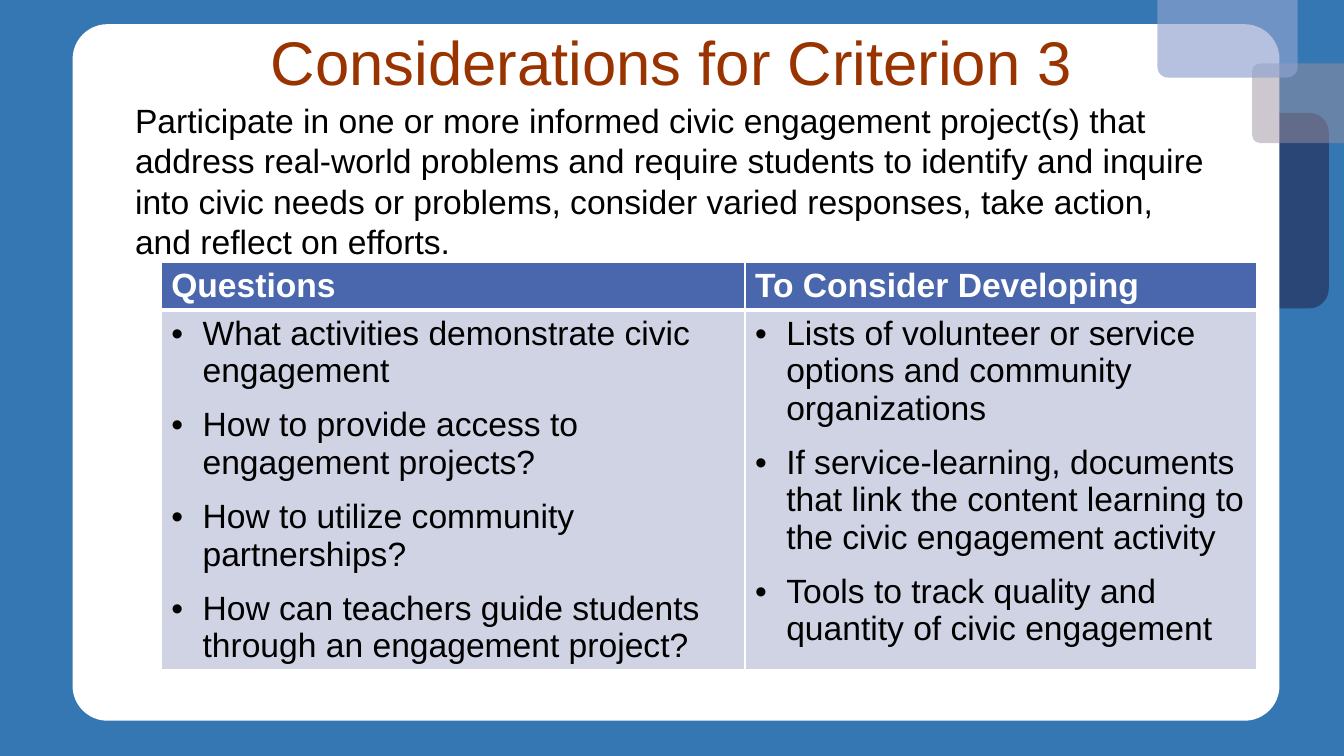
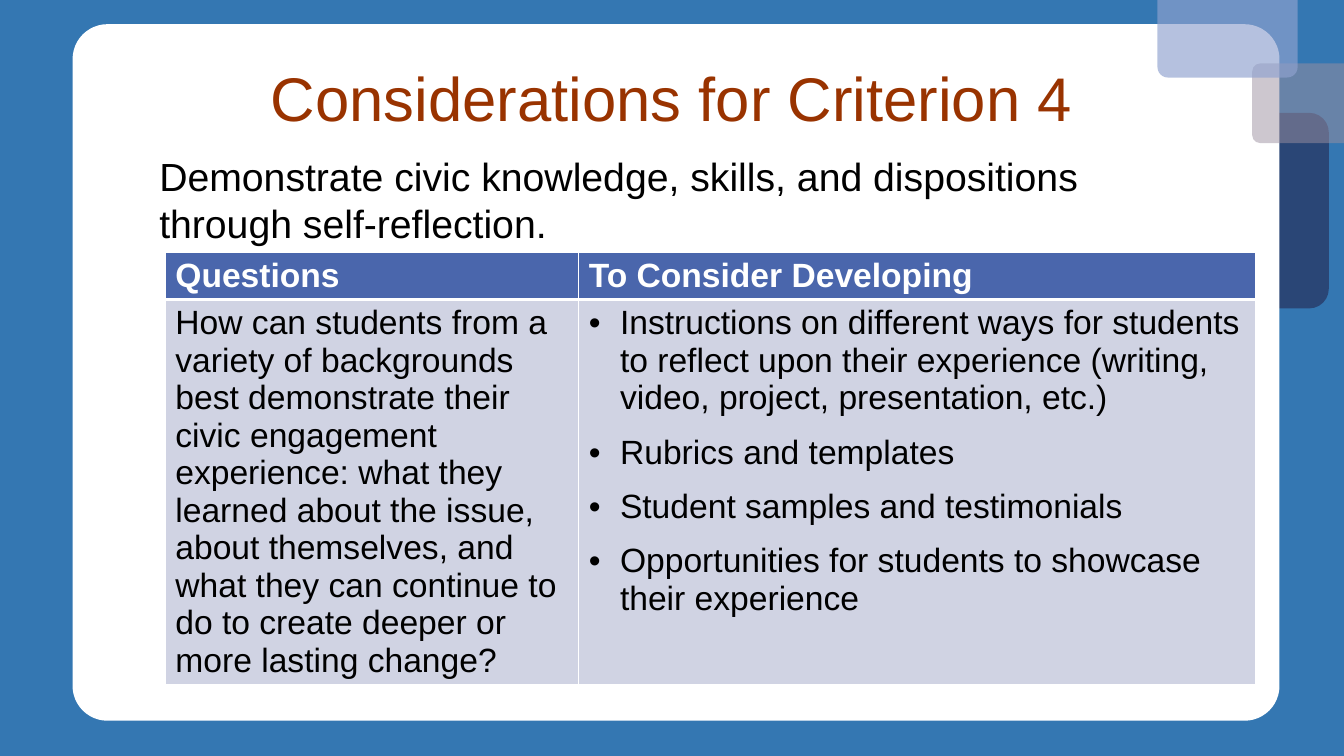
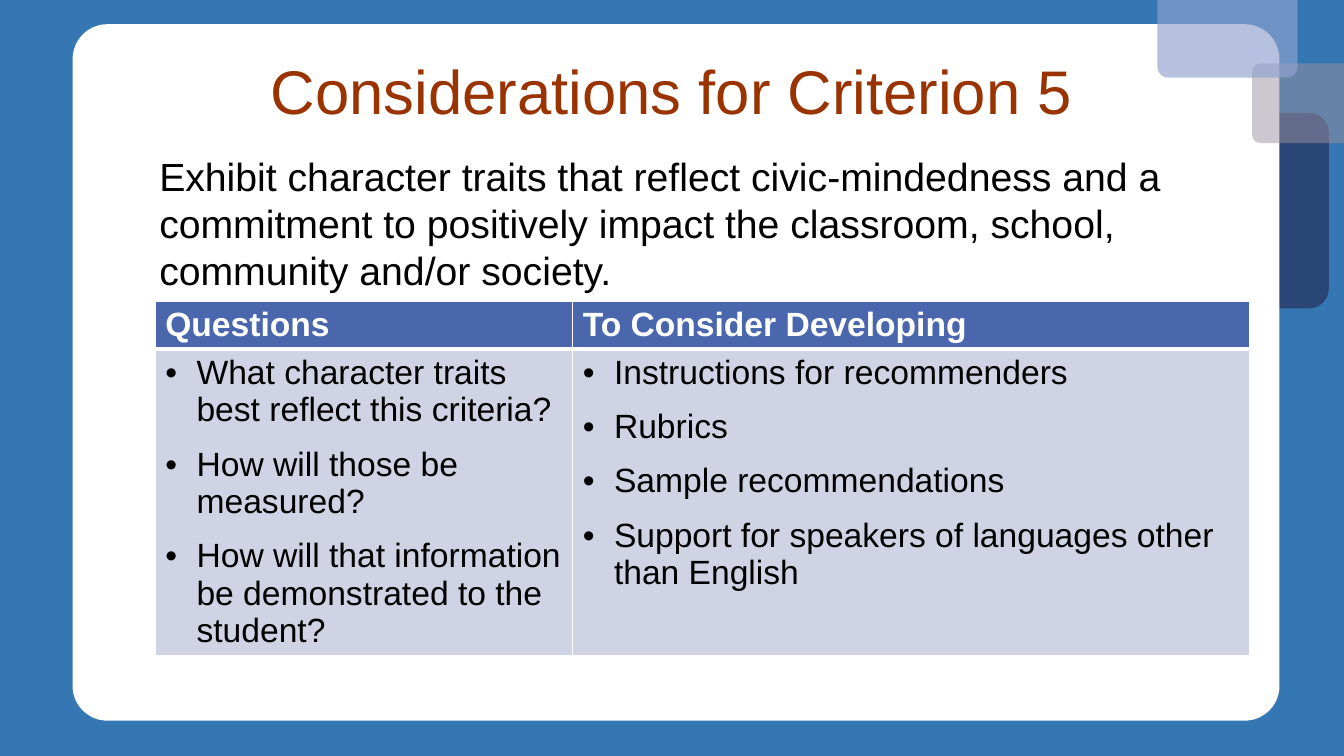
from collections import namedtuple

from pptx import Presentation
from pptx.dml.color import RGBColor
from pptx.enum.shapes import MSO_SHAPE
from pptx.enum.text import MSO_ANCHOR, MSO_AUTO_SIZE, PP_ALIGN
from pptx.oxml.ns import qn
from pptx.util import Inches, Pt
from lxml.etree import SubElement

WIDTH, HEIGHT = Inches(13.33), Inches(7.5)
FONT = "Arial"
BLUE, NAVY, MAUVE, LILAC = "3477B2", "242852", "9D90A0", "90A2CF"
WHITE, BLACK, RUST = "FFFFFF", "000000", "993300"
HEADER_FILL, CELL_FILL = "4A66AC", "D0D3E3"
HEADINGS = ["Questions", "To Consider Developing"]
HEADER_ROW = 6.2

# Lengths are percentages of the slide's width (left, width) and height (top, height).
Box = namedtuple("Box", "left top width height")
Criterion = namedtuple(
    "Criterion", "title title_box summary summary_size summary_box table_box columns cells")

PANELS = [  # box, corner, colour, opacity; from back to front
    (Box(82.22, 14.93, 16.65, 25.87), 0.1, NAVY, 62),
    (Box(5.4, 3.2, 89.8, 92.13), 0.05, WHITE, 100),
    (Box(93.17, 8.4, 16.65, 10.53), 0.1, MAUVE, 50),
    (Box(86.12, -7.07, 10.43, 17.33), 0.08, LILAC, 66),
]

CRITERIA = [
    Criterion(
        "Considerations for Criterion 3", Box(11.1, 1.87, 77.8, 13.73),
        "Participate in one or more informed civic engagement project(s) that address "
        "real-world problems and require students to identify and inquire into civic needs "
        "or problems, consider varied responses, take action, and reflect on efforts.",
        24, Box(9.3, 12.53, 81.47, 24.13),
        Box(12, 34.67, 81.47, 53.8), [43.43, 38.04],
        [["What activities demonstrate civic engagement",
          "How to provide access to engagement projects?",
          "How to utilize community partnerships?",
          "How can teachers guide students through an engagement project?"],
         ["Lists of volunteer or service options and community organizations",
          "If service-learning, documents that link the content learning to the civic "
          "engagement activity",
          "Tools to track quality and quantity of civic engagement"]]),
    Criterion(
        "Considerations for Criterion 4", Box(11.1, 5.33, 77.8, 16.27),
        "Demonstrate civic knowledge, skills, and dispositions through self-reflection.",
        28, Box(11.1, 19.47, 77.8, 14.67),
        Box(12.3, 33.33, 81.1, 57.1), [30.76, 50.34],
        [["How can students from a variety of backgrounds best demonstrate their civic "
          "engagement experience: what they learned about the issue, about themselves, and "
          "what they can continue to do to create deeper or more lasting change?"],
         ["Instructions on different ways for students to reflect upon their experience "
          "(writing, video, project, presentation, etc.)",
          "Rubrics and templates",
          "Student samples and testimonials",
          "Opportunities for students to showcase their experience"]]),
    Criterion(
        "Considerations for Criterion 5", Box(11.1, 2.8, 77.8, 19.33),
        "Exhibit character traits that reflect civic-mindedness and a commitment to "
        "positively impact the classroom, school, community and/or society.",
        28, Box(11.1, 19.47, 77.8, 21.87),
        Box(11.55, 39.87, 81.4, 46.7), [31.06, 50.34],
        [["What character traits best reflect this criteria?",
          "How will those be measured?",
          "How will that information be demonstrated to the student?"],
         ["Instructions for recommenders",
          "Rubrics",
          "Sample recommendations",
          "Support for speakers of languages other than English"]]),
]


def across(percent):
    return round(WIDTH * percent / 100)


def down(percent):
    return round(HEIGHT * percent / 100)


def frame_of(box):
    return across(box.left), down(box.top), across(box.width), down(box.height)


def place(shape, box):
    shape.left, shape.top, shape.width, shape.height = frame_of(box)


def paint(fill, colour):
    fill.solid()
    fill.fore_color.rgb = RGBColor.from_string(colour)


def style(para, size, colour, spacing=1.0, bold=False, after=0):
    para.line_spacing = spacing
    para.space_before, para.space_after = Pt(0), Pt(after)
    for span in para.runs:
        span.font.name, span.font.size, span.font.bold = FONT, Pt(size), bold
        span.font.color.rgb = RGBColor.from_string(colour)


def set_bullet(para, symbol=None, indent=0):
    """Give the paragraph a hanging bullet, or none when there is no symbol."""
    props = para._p.get_or_add_pPr()
    props.set("marL", str(Inches(indent)))
    props.set("indent", str(-Inches(indent)))
    if symbol:
        SubElement(props, qn("a:buFont"), typeface=FONT)
        SubElement(props, qn("a:buChar"), char=symbol)
    else:
        SubElement(props, qn("a:buNone"))


def set_borders(cell, top, bottom):
    """Draw white borders, which must stand before the fill of the cell."""
    props = cell._tc.get_or_add_tcPr()
    sides = [("L", 1), ("R", 1), ("T", top), ("B", bottom)]
    for index, (side, points) in enumerate(sides):
        line = SubElement(props, qn(f"a:ln{side}"), w=str(Pt(points)))
        SubElement(SubElement(line, qn("a:solidFill")), qn("a:srgbClr"), val=WHITE)
        props.insert(index, line)


def decorate(layout, page):
    """Draw the panels on the page, then move them behind the layout's placeholders."""
    for index, (box, corner, colour, opacity) in enumerate(PANELS):
        panel = page.shapes.add_shape(MSO_SHAPE.ROUNDED_RECTANGLE, *frame_of(box))
        panel.adjustments[0] = corner
        panel.shadow.inherit = False
        panel.line.fill.background()
        paint(panel.fill, colour)
        if opacity < 100:
            tint = next(panel.element.iter(qn("a:srgbClr")))
            SubElement(tint, qn("a:alpha"), val=str(opacity * 1000))
        layout.shapes.element.insert(2 + index, panel.element)


def fill_title(title, text, box):
    place(title, box)
    frame = title.text_frame
    frame.text = text
    frame.auto_size = MSO_AUTO_SIZE.NONE
    frame.vertical_anchor = MSO_ANCHOR.MIDDLE
    frame.paragraphs[0].alignment = PP_ALIGN.CENTER
    style(frame.paragraphs[0], 44, RUST, spacing=0.9)


def fill_summary(body, text, size, box):
    place(body, box)
    frame = body.text_frame
    frame.text = text
    frame.auto_size = MSO_AUTO_SIZE.NONE
    frame.vertical_anchor = MSO_ANCHOR.TOP
    set_bullet(frame.paragraphs[0])
    style(frame.paragraphs[0], size, BLACK, after=12)


def fill_cell(cell, items, is_header):
    frame = cell.text_frame
    for index, item in enumerate(items):
        para = frame.paragraphs[0] if index == 0 else frame.add_paragraph()
        para.text = item
        if len(items) > 1:
            set_bullet(para, "•", 0.31)
        style(para, 24, WHITE if is_header else BLACK, bold=is_header,
              after=0 if is_header else 12)
    paint(cell.fill, HEADER_FILL if is_header else CELL_FILL)
    set_borders(cell, *((1, 3) if is_header else (3, 1)))


def add_considerations(page, box, columns, cells):
    table = page.shapes.add_table(2, len(columns), *frame_of(box)).table
    table.horz_banding = False
    table.rows[0].height = down(HEADER_ROW)
    table.rows[1].height = down(box.height - HEADER_ROW)
    for index, width in enumerate(columns):
        table.columns[index].width = across(width)
        fill_cell(table.cell(0, index), [HEADINGS[index]], True)
        fill_cell(table.cell(1, index), cells[index], False)


def add_criterion(deck, layout, criterion):
    page = deck.slides.add_slide(layout)
    fill_title(page.shapes.title, criterion.title, criterion.title_box)
    fill_summary(page.placeholders[1], criterion.summary, criterion.summary_size,
                 criterion.summary_box)
    add_considerations(page, criterion.table_box, criterion.columns, criterion.cells)


def main():
    deck = Presentation()
    deck.slide_width, deck.slide_height = WIDTH, HEIGHT
    paint(deck.slide_master.background.fill, BLUE)
    layout = deck.slide_layouts[1]
    for criterion in CRITERIA:
        add_criterion(deck, layout, criterion)
    decorate(layout, deck.slides[0])
    deck.save("out.pptx")


if __name__ == "__main__":
    main()
